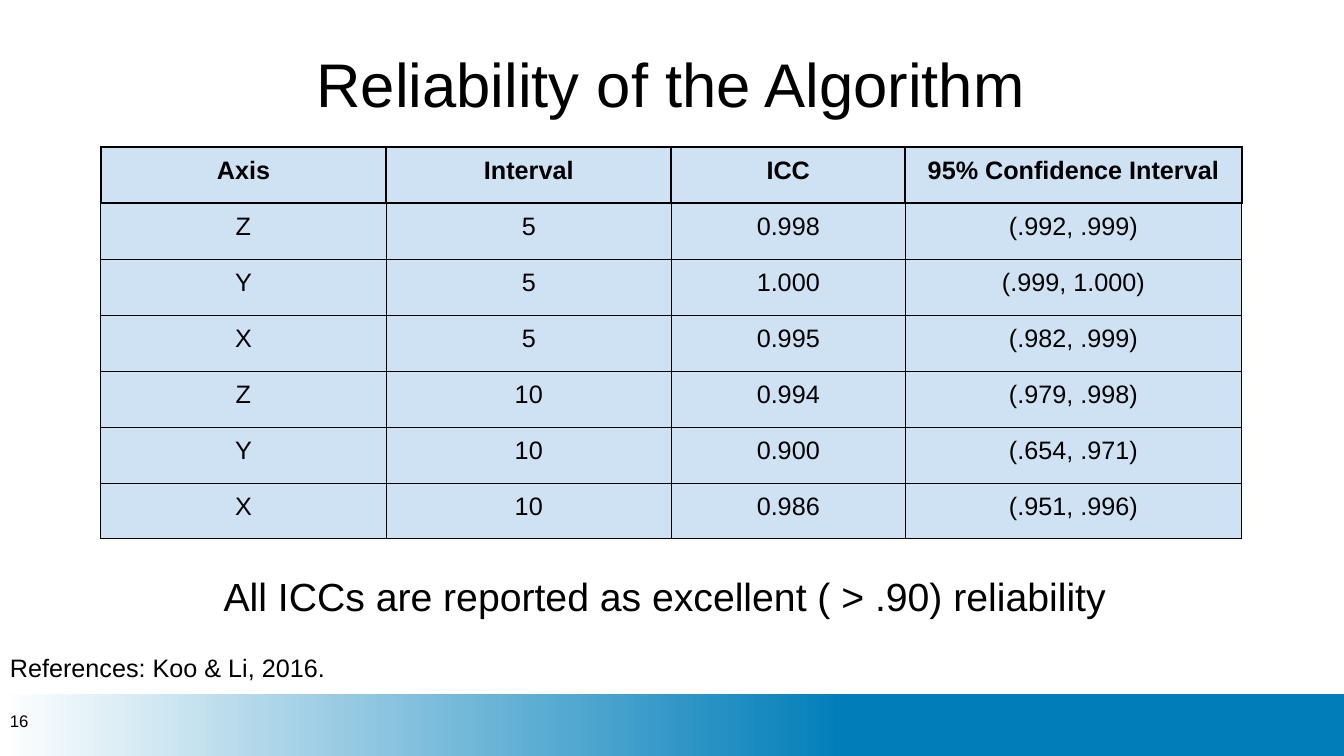
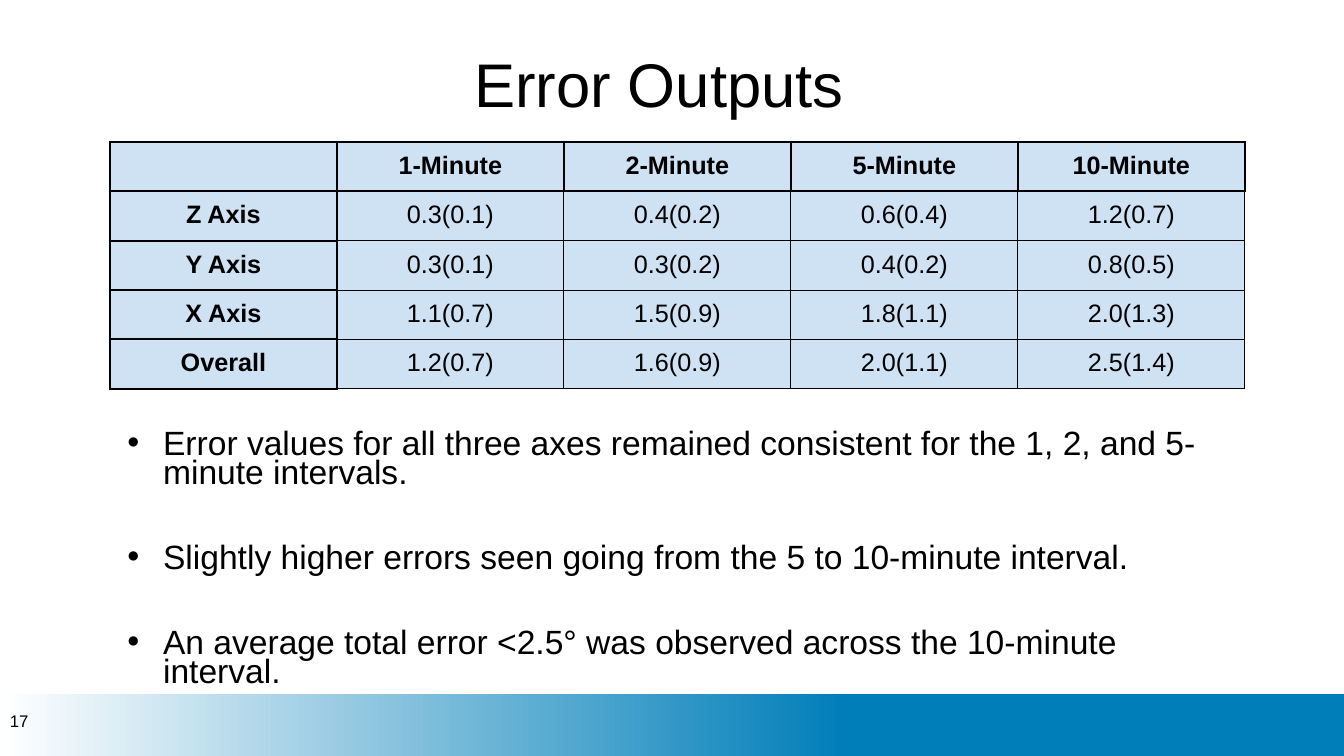
from dataclasses import dataclass

from lxml.etree import SubElement
from pptx import Presentation
from pptx.dml.color import RGBColor
from pptx.enum.shapes import MSO_SHAPE
from pptx.enum.text import MSO_ANCHOR, PP_ALIGN
from pptx.oxml.ns import qn
from pptx.util import Cm, Pt


@dataclass(frozen=True)
class Theme:
    font: str = "Arial"
    ink: RGBColor = RGBColor(0x00, 0x00, 0x00)
    paper: RGBColor = RGBColor(0xFF, 0xFF, 0xFF)
    band: RGBColor = RGBColor(0x00, 0x7E, 0xB9)
    cell: RGBColor = RGBColor(0xCF, 0xE2, 0xF3)
    title: Pt = Pt(44)
    statement: Pt = Pt(28)
    bullet: Pt = Pt(24)
    body: Pt = Pt(18)
    number: Pt = Pt(12)
    thick: Pt = Pt(1.5)
    thin: Pt = Pt(0.75)


theme = Theme()


def write(paragraph, text, size, bold=False, **layout):
    paragraph.text = text
    for name, value in layout.items():
        setattr(paragraph, name, value)
    font = {"name": theme.font, "size": size, "bold": bold}
    for name, value in font.items():
        setattr(paragraph.font, name, value)
    paragraph.font.color.rgb = theme.ink


def add_text_frame(slide, left, top, width, height, anchor=MSO_ANCHOR.TOP):
    frame = slide.shapes.add_textbox(Cm(left), Cm(top), Cm(width), Cm(height)).text_frame
    frame.word_wrap = True
    frame.vertical_anchor = anchor
    return frame


pages = [
    {
        "number": "16",
        "title": "Reliability of the Algorithm",
        "title_left": 0.91,
        "table_at": (2.54, 3.71),
        "columns": [7.19, 7.19, 5.89, 8.48],
        "row_height": 1.41,
        "row_headings": False,
        "rows": [
            ["Axis", "Interval", "ICC", "95% Confidence Interval"],
            ["Z", "5", "0.998", "(.992, .999)"],
            ["Y", "5", "1.000", "(.999, 1.000)"],
            ["X", "5", "0.995", "(.982, .999)"],
            ["Z", "10", "0.994", "(.979, .998)"],
            ["Y", "10", "0.900", "(.654, .971)"],
            ["X", "10", "0.986", "(.951, .996)"],
        ],
    },
    {
        "number": "17",
        "title": "Error Outputs",
        "title_left": 0.61,
        "table_at": (2.77, 3.58),
        "columns": [5.72] * 5,
        "row_height": 1.22,
        "row_headings": True,
        "rows": [
            ["", "1-Minute", "2-Minute", "5-Minute", "10-Minute"],
            ["Z Axis", "0.3(0.1)", "0.4(0.2)", "0.6(0.4)", "1.2(0.7)"],
            ["Y Axis", "0.3(0.1)", "0.3(0.2)", "0.4(0.2)", "0.8(0.5)"],
            ["X Axis", "1.1(0.7)", "1.5(0.9)", "1.8(1.1)", "2.0(1.3)"],
            ["Overall", "1.2(0.7)", "1.6(0.9)", "2.0(1.1)", "2.5(1.4)"],
        ],
    },
]

deck = Presentation()
deck.slide_width, deck.slide_height = Cm(33.87), Cm(19.05)
blank = deck.slide_layouts[6]
slides = []

for page in pages:
    slide = deck.slides.add_slide(blank)
    slides.append(slide)

    band = slide.shapes.add_shape(MSO_SHAPE.RECTANGLE, 0, Cm(17.5), deck.slide_width, Cm(1.55))
    band.shadow.inherit = False
    band.line.fill.background()
    band.fill.gradient()
    band.fill.gradient_angle = 0
    stops = [(0, theme.paper), (0.63, theme.band)]
    for stop, (position, color) in zip(band.fill.gradient_stops, stops):
        stop.position = position
        stop.color.rgb = color

    title = add_text_frame(slide, page["title_left"], 0.36, 32, 3.68, MSO_ANCHOR.MIDDLE)
    write(title.paragraphs[0], page["title"], theme.title,
          alignment=PP_ALIGN.CENTER, line_spacing=0.9)

    number = add_text_frame(slide, 0, 17.65, 7.62, 1.02, MSO_ANCHOR.MIDDLE)
    write(number.paragraphs[0], page["number"], theme.number)

    rows, columns = page["rows"], page["columns"]
    left, top = page["table_at"]
    results = slide.shapes.add_table(
        len(rows), len(columns), Cm(left), Cm(top),
        Cm(sum(columns)), Cm(page["row_height"] * len(rows))).table
    results.first_row = results.horz_banding = False
    for column, width in zip(results.columns, columns):
        column.width = Cm(width)

    for r, values in enumerate(rows):
        results.rows[r].height = Cm(page["row_height"])
        for c, value in enumerate(values):
            cell = results.cell(r, c)
            row_heading = page["row_headings"] and c == 0
            heading = r == 0 or row_heading
            margins = ("margin_left", "margin_right", "margin_top", "margin_bottom")
            for margin in margins:
                setattr(cell, margin, Cm(0.24))
            write(cell.text_frame.paragraphs[0], value, theme.body, heading,
                  alignment=PP_ALIGN.CENTER)
            edges = {
                "a:lnL": heading or (page["row_headings"] and c == 1),
                "a:lnR": heading,
                "a:lnT": heading or r == 1,
                "a:lnB": heading,
            }
            properties = cell._tc.get_or_add_tcPr()
            for edge, is_thick in edges.items():
                weight = theme.thick if is_thick else theme.thin
                border = SubElement(properties, qn(edge), w=str(int(weight)))
                ink = SubElement(border, qn("a:solidFill"))
                SubElement(ink, qn("a:srgbClr"), val=str(theme.ink))
            cell.fill.solid()
            cell.fill.fore_color.rgb = theme.cell

reliability, errors = slides

statement = add_text_frame(reliability, 2.46, 14.17, 28.58, 1.7)
write(statement.paragraphs[0], "All ICCs are reported as excellent ( > .90) reliability",
      theme.statement, alignment=PP_ALIGN.CENTER)
references = add_text_frame(reliability, 0, 16.18, 16.48, 1.27)
write(references.paragraphs[0], "References: Koo & Li, 2016.", theme.body)
for frame in (statement, references):
    frame.margin_top = frame.margin_bottom = Cm(0.25)

findings = [
    "Error values for all three axes remained consistent for the 1, 2, and 5-minute intervals.",
    "Slightly higher errors seen going from the 5 to 10-minute interval.",
    "An average total error <2.5° was observed across the 10-minute interval.",
]
summary = add_text_frame(errors, 2.59, 10.77, 28.7, 6.58)
for i, finding in enumerate(findings):
    paragraph = summary.paragraphs[0] if i == 0 else summary.add_paragraph()
    indents = paragraph._p.get_or_add_pPr()
    indents.set("marL", str(Cm(1.27)))
    indents.set("indent", str(-Cm(0.91)))
    bullet_color = SubElement(indents, qn("a:buClr"))
    SubElement(bullet_color, qn("a:srgbClr"), val=str(theme.ink))
    SubElement(indents, qn("a:buSzPct"), val="64000")
    SubElement(indents, qn("a:buFont"), typeface=theme.font)
    SubElement(indents, qn("a:buChar"), char="●")
    write(paragraph, finding, theme.bullet, line_spacing=0.72,
          space_before=Pt(40 if i else 0))

deck.save("out.pptx")
